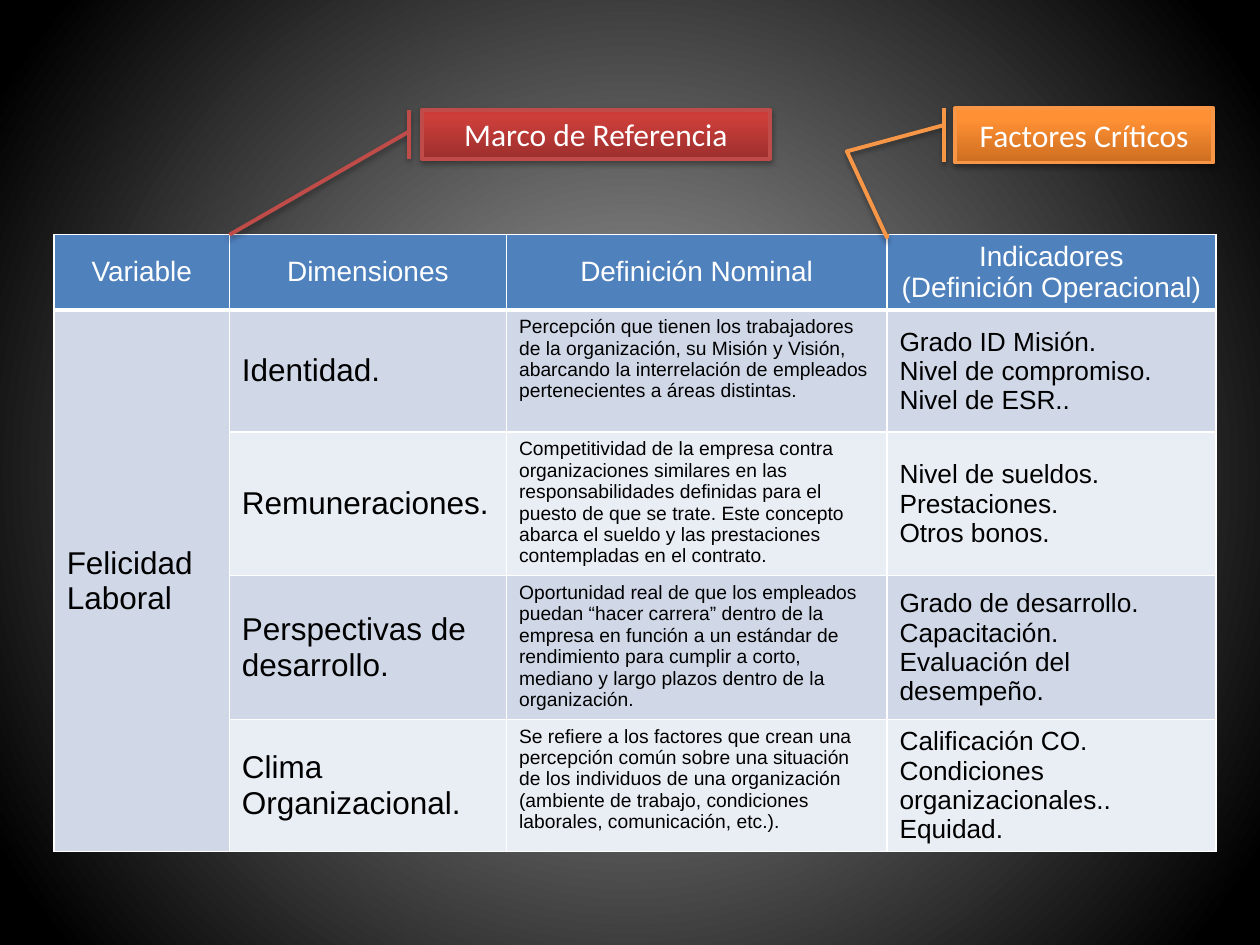
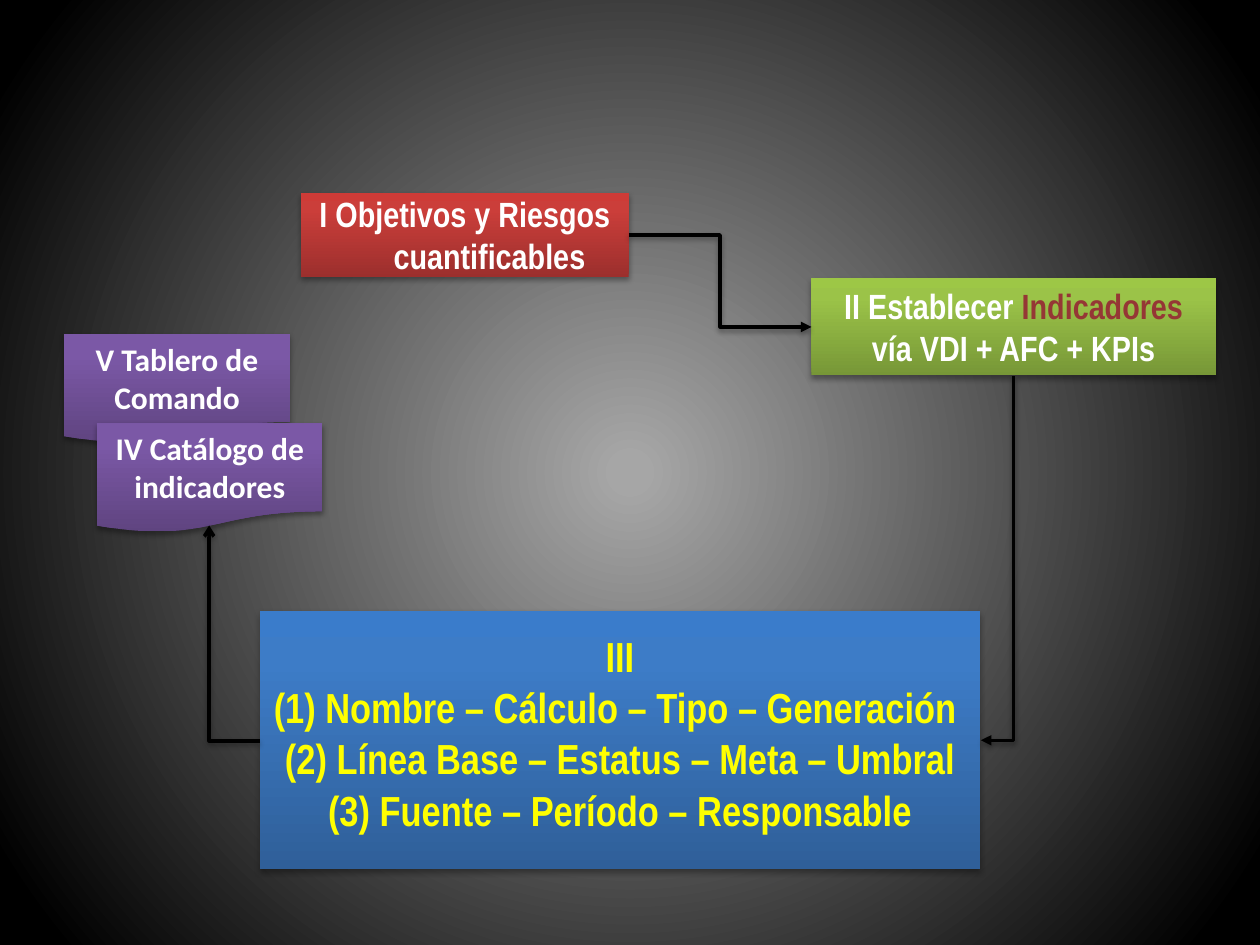
from lxml.etree import SubElement
from pptx import Presentation
from pptx.dml.color import RGBColor
from pptx.enum.shapes import MSO_CONNECTOR, MSO_SHAPE
from pptx.enum.text import MSO_ANCHOR, PP_ALIGN
from pptx.oxml import parse_xml
from pptx.oxml.ns import nsdecls, qn
from pptx.util import Inches, Pt

HUES = {"white": "FFFFFF", "black": "000000", "yellow": "FFFF00", "wine": "953735",
        "head": "4F81BD", "odd": "D0D8E8", "even": "E9EDF4",
        "red": "BF4C48", "orange": "F79646"}
# Shades from the bottom of a box to its top
TONES = {"red": ("9C2F2D", "CB3E3A", "CE3B37"), "orange": ("CC6E20", "FF9034", "FF9136"),
         "blue": ("2F5F99", "3D7CC7", "3A7CCB"), "green": ("779737", "9BC348", "9DC746"),
         "purple": ("5F4480", "7B58A6", "7C57A8")}
COLS = [1.39, 2.2, 3.02, 2.61]
ROWS = [0.6, 0.97, 1.14, 1.14, 1.05]
HEADS = ["Variable", "Dimensiones", "Definición Nominal",
         "Indicadores\n(Definición Operacional)"]
BODY = [
    ("Identidad.",
     "Percepción que tienen los trabajadores de la organización, su Misión y Visión, "
     "abarcando la interrelación de empleados pertenecientes a áreas distintas.",
     "Grado ID Misión.\nNivel de compromiso.\nNivel de ESR.."),
    ("Remuneraciones.",
     "Competitividad de la empresa contra organizaciones similares en las "
     "responsabilidades definidas para el puesto de que se trate. Este concepto abarca "
     "el sueldo y las prestaciones contempladas en el contrato.",
     "Nivel de sueldos.\nPrestaciones.\nOtros bonos."),
    ("Perspectivas de desarrollo.",
     "Oportunidad real de que los empleados puedan “hacer carrera” dentro de la empresa "
     "en función a un estándar de rendimiento para cumplir a corto, mediano y largo "
     "plazos dentro de la organización.",
     "Grado de desarrollo.\nCapacitación.\nEvaluación del desempeño."),
    ("Clima Organizacional.",
     "Se refiere a los factores que crean una percepción común sobre una situación de "
     "los individuos de una organización (ambiente de trabajo, condiciones laborales, "
     "comunicación, etc.).",
     "Calificación CO.\nCondiciones organizacionales..\nEquidad."),
]


def shade(host, stops, way):
    """Swap the solid fill of an element for a gradient."""
    marks = "".join(f'<a:gs pos="{pos * 1000}"><a:srgbClr val="{hue}"/></a:gs>'
                    for pos, hue in stops)
    fill = parse_xml(f'<a:gradFill {nsdecls("a")} rotWithShape="1">'
                     f'<a:gsLst>{marks}</a:gsLst>{way}</a:gradFill>')
    host.replace(host.find(qn("a:solidFill")), fill)


def box(slide, kind, tone, at, text, font, size, hue="white", bold=False):
    """Add a shaded box with a soft shadow and centred text."""
    shape = slide.shapes.add_shape(kind, *map(Inches, at))
    shape.fill.solid()
    shape.line.fill.background()
    shade(shape.element.spPr, zip((0, 80, 100), TONES[tone]),
          '<a:lin ang="16200000" scaled="0"/>')
    shape.shadow.inherit = False
    shape.element.spPr.find(qn("a:effectLst")).append(parse_xml(
        f'<a:outerShdw {nsdecls("a")} blurRad="40000" dist="23000" dir="5400000" '
        'rotWithShape="0"><a:srgbClr val="000000"><a:alpha val="35000"/></a:srgbClr>'
        '</a:outerShdw>'))
    shape.text_frame.text = text
    for par in shape.text_frame.paragraphs:
        par.alignment = PP_ALIGN.CENTER
        look = {"name": font, "size": Pt(size), "bold": bold}
        for key, value in look.items():
            setattr(par.font, key, value)
        par.font.color.rgb = RGBColor.from_string(HUES[hue])
    return shape


deck = Presentation()
deck.slide_width, deck.slide_height = Inches(10), Inches(7.5)
ground = deck.slide_master.background.fill
ground.solid()
shade(deck.slide_master.element.find(".//" + qn("p:bgPr")),
      [(2, "A6A6A6"), (94, "000000")],
      '<a:path path="circle"><a:fillToRect l="50000" t="50000" r="50000" b="50000"/></a:path>')
blank = deck.slide_layouts[6]

# Slide 1: variable, dimensions and indicators
first = deck.slides.add_slide(blank)
table = first.shapes.add_table(len(ROWS), len(COLS), Inches(0.43), Inches(1.86),
                               Inches(sum(COLS)), Inches(sum(ROWS))).table
for col, width in zip(table.columns, COLS):
    col.width = Inches(width)
for row, height in zip(table.rows, ROWS):
    row.height = Inches(height)
table.cell(1, 0).merge(table.cell(4, 0))
grid = [HEADS] + [("Felicidad Laboral" if i == 0 else "", *line)
                  for i, line in enumerate(BODY)]
for r, line in enumerate(grid):
    for c, text in enumerate(line):
        cell = table.cell(r, c)
        top = r == 0
        tint = "head" if top else "odd" if r % 2 or c == 0 else "even"
        cell.fill.solid()
        cell.fill.fore_color.rgb = RGBColor.from_string(HUES[tint])
        props = cell._tc.get_or_add_tcPr()
        for i, side in enumerate("LRTB"):
            wide = 3 if (top and side == "B") else 1
            props.insert(i, parse_xml(
                f'<a:ln{side} {nsdecls("a")} w="{Pt(wide)}"><a:solidFill>'
                f'<a:srgbClr val="{HUES["white"]}"/></a:solidFill></a:ln{side}>'))
        plain = c == 2 and not top
        cell.vertical_anchor = MSO_ANCHOR.TOP if plain else MSO_ANCHOR.MIDDLE
        cell.text = text
        for par in cell.text_frame.paragraphs:
            par.alignment = PP_ALIGN.CENTER if top else PP_ALIGN.LEFT
            look = {"name": "Arial", "bold": False,
                    "size": Pt(16 if top else (18, 18, 11, 15)[c])}
            for key, value in look.items():
                setattr(par.font, key, value)
            par.font.color.rgb = RGBColor.from_string(HUES["white" if top else "black"])

NOTES = [
    (MSO_SHAPE.LINE_CALLOUT_1_BORDER_AND_ACCENT_BAR, "red", (3.35, 0.87, 2.76, 0.39),
     "Marco de Referencia", (0.445, -0.037, 2.546, -0.554)),
    (MSO_SHAPE.LINE_CALLOUT_3_BORDER_AND_ACCENT_BAR, "orange", (7.58, 0.86, 2.05, 0.43),
     "Factores Críticos", (0.309, -0.042, 0.795, -0.419, 2.385, -0.264, 2.321, -0.263)),
]
for kind, tone, at, text, bends in NOTES:
    note = box(first, kind, tone, at, text, "Calibri", 18)
    note.line.color.rgb = RGBColor.from_string(HUES[tone])
    note.line.width = Pt(2.25)
    for i, bend in enumerate(bends):
        note.adjustments[i] = bend

# Slide 2: steps from goals to dashboard
second = deck.slides.add_slide(blank)
RECT, PAPER = MSO_SHAPE.RECTANGLE, MSO_SHAPE.FLOWCHART_DOCUMENT
sheet = box(second, RECT, "blue", (2.06, 4.85, 5.72, 2.05),
            "III\n(1) Nombre – Cálculo – Tipo – Generación \n"
            "(2) Línea Base – Estatus – Meta – Umbral\n"
            "(3) Fuente – Período – Responsable", "Arial Narrow", 24, "yellow", True)
for i, par in enumerate(sheet.text_frame.paragraphs):
    par.line_spacing = 0.6
    par.space_before = Pt(12 if i else 0)

goals = box(second, RECT, "red", (2.39, 1.53, 2.6, 0.67),
            "I Objetivos y Riesgos\ncuantificables", "Arial Narrow", 20, bold=True)
for side in ("left", "top", "right", "bottom"):
    setattr(goals.text_frame, "margin_" + side, 0)
inner = goals.text_frame.paragraphs[1]._p.get_or_add_pPr()
inner.set("marL", str(Inches(0.5)))
inner.set("indent", str(Inches(-0.11)))

means = box(second, RECT, "green", (6.44, 2.21, 3.21, 0.77),
            "II Establecer ", "Arial Narrow", 20, bold=True)
for text, hue in (("Indicadores ", "wine"), ("vía VDI + AFC + KPIs", "white")):
    run = means.text_frame.paragraphs[0].add_run()
    run.text = text
    run.font.color.rgb = RGBColor.from_string(HUES[hue])
for shape in (goals, means):
    shape.text_frame.vertical_anchor = MSO_ANCHOR.TOP

for left, top, text in ((0.51, 2.65, "V Tablero de Comando"),
                        (0.77, 3.36, "IV Catálogo de indicadores")):
    box(second, PAPER, "purple", (left, top, 1.79, 0.87), text, "Calibri", 18, bold=True)

# Left, top, width, height before turning; turn; preset; arrowhead
LINKS = [(4.99, 1.86, 1.45, 0.74, 0, "bentConnector3", "triangle"),
         (6.47, 4.3, 2.89, 0.26, 90, "bentConnector2", "triangle"),
         (1.66, 4.17, 0.4, 1.71, 180, "bentConnector2", "arrow")]
for left, top, width, height, turn, preset, tip in LINKS:
    link = second.shapes.add_connector(
        MSO_CONNECTOR.ELBOW, *map(Inches, (left, top, left + width, top + height)))
    link.line.color.rgb = RGBColor.from_string(HUES["black"])
    link.line.width = Pt(2)
    props = link.element.spPr
    props.find(qn("a:prstGeom")).set("prst", preset)
    if turn:
        props.find(qn("a:xfrm")).set("rot", str(turn * 60000))
    else:
        link.begin_connect(goals, 3)
        link.end_connect(means, 1)
    SubElement(props.find(qn("a:ln")), qn("a:tailEnd"), type=tip)
    props.append(parse_xml(
        f'<a:effectLst {nsdecls("a")}><a:outerShdw blurRad="40000" dist="20000" '
        'dir="5400000" rotWithShape="0"><a:srgbClr val="000000"><a:alpha val="38000"/>'
        '</a:srgbClr></a:outerShdw></a:effectLst>'))

deck.save("out.pptx")
